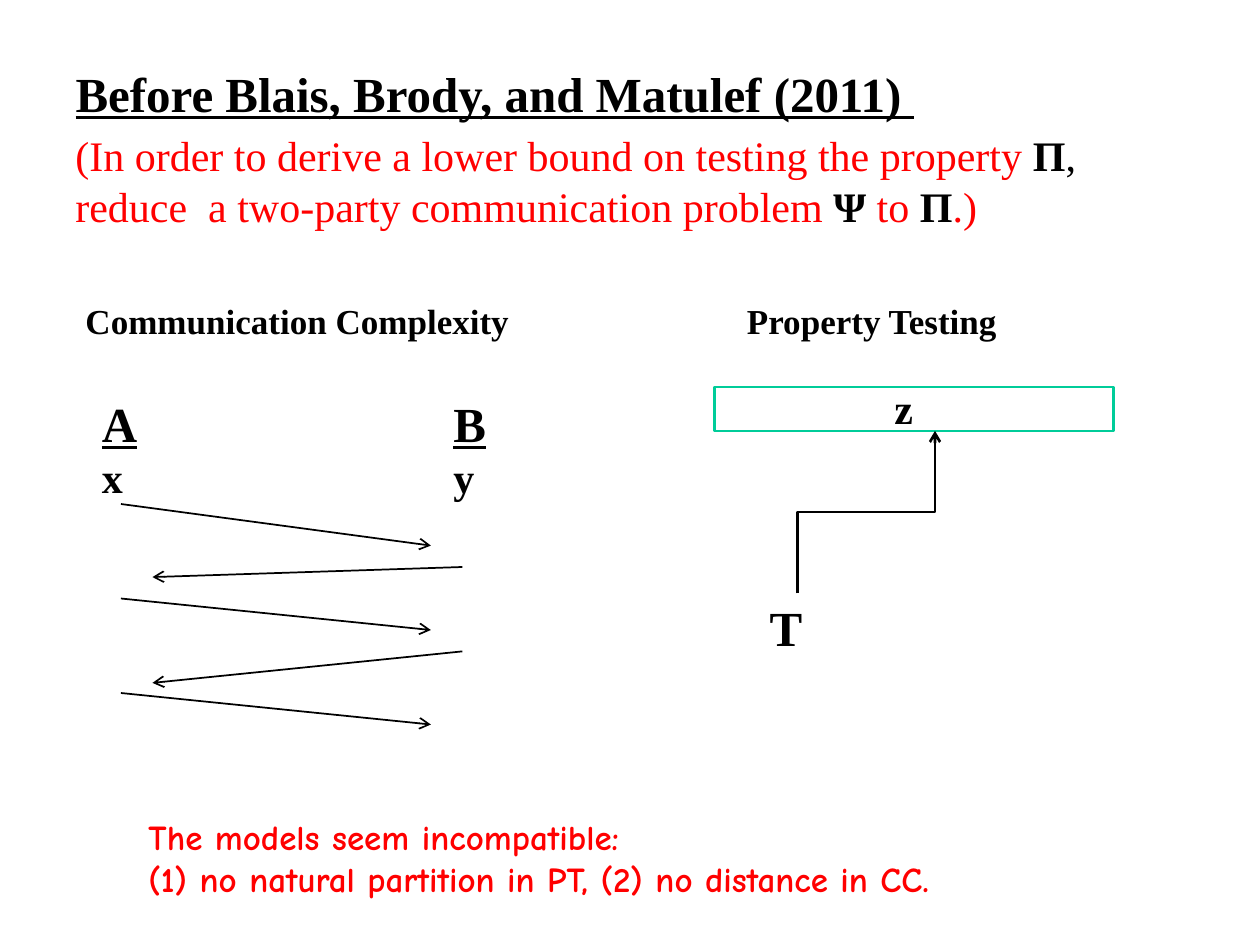
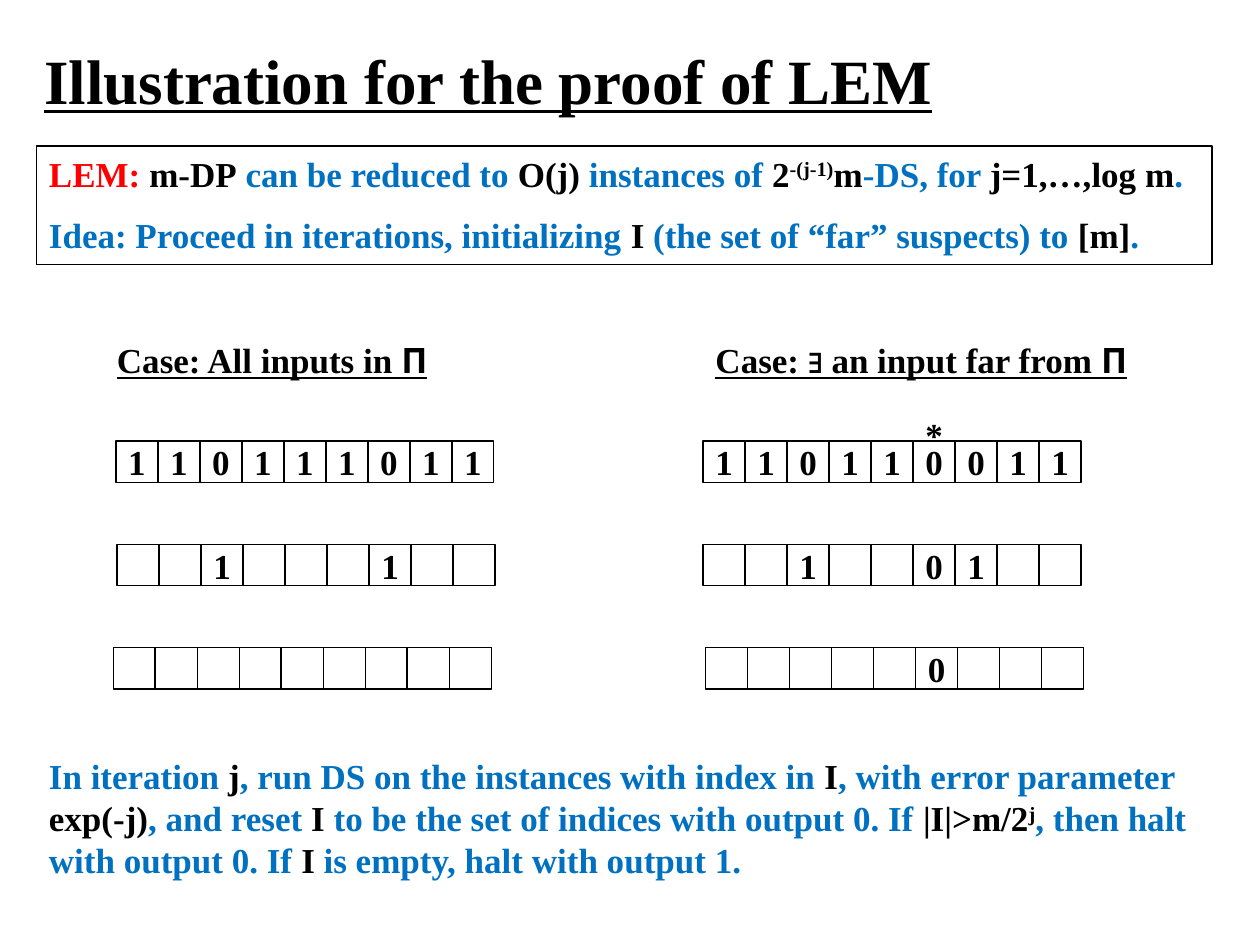
from lxml.etree import SubElement
from pptx import Presentation
from pptx.dml.color import RGBColor as Rgb
from pptx.enum.shapes import MSO_CONNECTOR as Link, MSO_SHAPE as Kind
from pptx.enum.text import MSO_ANCHOR as Anchor, MSO_AUTO_SIZE as Fit, PP_ALIGN as Align
from pptx.oxml.ns import qn
from pptx.util import Inches, Pt

HUES = {"ink": "000000", "red": "FF0000", "blue": "0070C0", "teal": "00CC99"}
SERIF, COMIC = "Times New Roman", "Comic Neue"
INK = {"hue": "ink"}
PLAIN = {"hue": "ink", "bold": False}
STRONG = {"hue": "ink", "bold": True}
POWER = {"hue": "ink", "raised": True}
SYMBOL = {"name": COMIC}
CELLS, CELL, TALL = 9, 1 / 3, 0.33


def style(font, hue=None, size=None, name=None, bold=None, under=None):
    """Set the given traits of a font."""
    if hue:
        font.color.rgb = Rgb.from_string(HUES[hue])
    if size:
        font.size = Pt(size)
    if name:
        font.name = name
    if bold is not None:
        font.bold = bold
    if under is not None:
        font.underline = under


def write(para, parts, hue="ink", size=20, name=SERIF, bold=True, under=False):
    """Fill a paragraph with strings and (string, traits) pairs."""
    style(para.font, hue, size, name, bold, under)
    for part in parts:
        words, traits = (part, {}) if isinstance(part, str) else part
        traits = dict(traits)
        raised = traits.pop("raised", False)
        for row, line in enumerate(words.split("\n")):
            if row:
                para.add_line_break()
            if line:
                run = para.add_run()
                run.text = line
                style(run.font, **traits)
                if raised:
                    run._r.get_or_add_rPr().set("baseline", "30000")


def label(slide, box, *parts, **traits):
    """Add a text box with one paragraph."""
    frame = slide.shapes.add_textbox(*map(Inches, box)).text_frame
    frame.word_wrap = True
    write(frame.paragraphs[0], parts, **traits)
    return frame


def head(slide, box, words, size):
    """Place and format the title."""
    title = slide.shapes.title
    title.left, title.top, title.width, title.height = map(Inches, box)
    frame = title.text_frame
    frame.auto_size = Fit.NONE
    frame.vertical_anchor = Anchor.TOP
    frame.margin_top = Inches(0.08)
    para = frame.paragraphs[0]
    para.alignment = Align.LEFT
    write(para, [words], size=size, under=True)


def frame_box(slide, box, hue="ink", width=0.75):
    """Add an unfilled outlined rectangle."""
    shape = slide.shapes.add_shape(Kind.RECTANGLE, *map(Inches, box))
    shape.shadow.inherit = False
    shape.fill.background()
    shape.line.color.rgb = Rgb.from_string(HUES[hue])
    shape.line.width = Pt(width)
    return shape


def link(slide, start, end, width=1, arrow=False, kind=Link.STRAIGHT):
    """Add a black line, with an arrowhead at its end if asked."""
    line = slide.shapes.add_connector(kind, *map(Inches, (*start, *end)))
    line.line.color.rgb = Rgb.from_string(HUES["ink"])
    line.line.width = Pt(width)
    if arrow:
        SubElement(line.line._get_or_add_ln(), qn("a:tailEnd"), type="arrow")
    SubElement(line._element.spPr, qn("a:effectLst"))
    return line


def elbow(slide, start, end):
    """Add an arrow that goes up, right and up again."""
    mid = [(a + b) / 2 for a, b in zip(start, end)]
    wide, high = (start[1] - end[1]) / 2, (end[0] - start[0]) / 2
    line = link(slide, (mid[0] + wide, mid[1] + high),
                (mid[0] - wide, mid[1] - high), 1.5, True, Link.ELBOW)
    line._element.spPr.find(qn("a:xfrm")).set("rot", "5400000")


def talk(slide, left, top):
    """Draw the two parties and the messages between them."""
    label(slide, (left, top, 3.58, 0.44), "Communication Complexity")
    for x, party, input in ((0.13, "A", "x"), (2.92, "B", "y")):
        label(slide, (left + x, top + 0.74, 0.5, 0.98),
              (party + "\n", {"size": 28, "under": True}), input, size=24)
    for y, drop in ((1.67, 0.33), (2.42, 0.25), (3.17, 0.25)):
        link(slide, (left + 0.38, top + y), (left + 2.84, top + y + drop), arrow=True)
    for y, drop in ((2.17, 0.08), (2.84, 0.25)):
        link(slide, (left + 3.09, top + y), (left + 0.63, top + y + drop), arrow=True)


def test(slide, left, top):
    """Draw the tester that queries its input."""
    label(slide, (left + 0.16, top, 2.33, 0.44), "Property Testing")
    frame_box(slide, (left, top + 0.74, 3.17, 0.35), "teal", 1.5)
    label(slide, (left + 0.34, top + 2.36, 0.5, 0.57), "T", size=28)
    label(slide, (left + 1.33, top + 0.66, 0.36, 0.5), "z", size=24)
    elbow(slide, (left + 0.66, top + 2.38), (left + 1.75, top + 1.09))


def digit(slide, left, top, mark):
    """Centre one mark over a cell."""
    frame = label(slide, (left, top, CELL, 0.44), mark)
    frame.margin_left = frame.margin_right = 0
    frame.paragraphs[0].alignment = Align.CENTER


def strip(slide, left, top, marks):
    """Draw a row of cells, where a dot stands for an empty one."""
    frame_box(slide, (left, top, CELLS * CELL, TALL))
    for col in range(1, CELLS):
        x = left + col * CELL
        link(slide, (x, top), (x, top + TALL))
    for col, mark in enumerate(marks):
        if mark != ".":
            digit(slide, left + col * CELL, top - 0.05, mark)


def case(slide, left, top, width, words, rows):
    """Draw a case heading above its rows of cells."""
    label(slide, (left, top, width, 0.44), words, ("Π", SYMBOL), under=True)
    for step, (shift, marks) in enumerate(rows):
        strip(slide, left + shift, top + 0.86 + step * 0.82, marks)


def lemma(slide, box):
    """Add the framed lemma and its idea."""
    frame = frame_box(slide, box).text_frame
    frame.word_wrap = True
    frame.vertical_anchor = Anchor.TOP
    first, second = frame.paragraphs[0], frame.add_paragraph()
    second.space_before = Pt(11)
    first.alignment = second.alignment = Align.LEFT
    write(first, [("LEM: ", {"hue": "red"}), ("m-DP", INK), " can be reduced to ",
                  ("O(j)", INK), " instances of ", ("2", INK), ("-(j-1)", POWER),
                  ("m", INK), "-DS, for ", ("j=1,…,log m", INK), "."], "blue")
    write(second, ["Idea: Proceed in iterations, initializing ", ("I", INK),
                   " (the set of “far” suspects) to ", ("[m]", INK), "."], "blue")


def models(slide):
    """Build the slide that compares the two models."""
    head(slide, (0.5, 0.42, 8.68, 0.56), "Before Blais, Brody, and Matulef (2011) ", 28)
    label(slide, (0.5, 0.98, 8.68, 0.94),
          "(In order to derive a lower bound on testing the property ", ("Π", STRONG),
          (", \n", PLAIN), "reduce  a two-party communication problem ",
          ("Ψ ", STRONG), "to ", ("Π", STRONG), ".)", hue="red", size=24, bold=False)
    talk(slide, 0.58, 2.33)
    test(slide, 5.67, 2.33)
    label(slide, (1.08, 6.42, 7.42, 0.77), "The models seem incompatible: \n"
          "(1) no natural partition in PT, (2) no distance in CC.", hue="red", name=COMIC)


def proof(slide):
    """Build the slide that illustrates the proof."""
    head(slide, (0.25, 0.25, 7.88, 0.67), "Illustration for the proof of LEM", 36)
    lemma(slide, (0.29, 1.16, 9.33, 0.94))
    case(slide, 0.83, 2.64, 2.67, "Case: All inputs in ",
         ((0.09, "110111011"), (0.1, "..1...1.."), (0.07, ".........")))
    case(slide, 5.58, 2.64, 3.58, "Case: ∃ an input far from ",
         ((0, "110110011"), (0, "..1..01.."), (0.02, ".....0...")))
    digit(slide, 5.58 + 5 * CELL, 3.23, "*")
    label(slide, (0.29, 5.94, 9.33, 1.11), "In iteration ", ("j", INK),
          ", run DS on the instances with index in ", ("I", INK),
          ", with error parameter ", ("exp(-j)", INK), ", and reset ", ("I", INK),
          " to be the set of indices with output 0. If ", ("|I|>m/2", INK),
          ("j", POWER), ", then halt with output 0. If ", ("I", INK),
          " is empty, halt with output 1.", hue="blue")


def main():
    """Build and save both slides."""
    deck = Presentation()
    deck.slide_width, deck.slide_height = Inches(10), Inches(7.5)
    for build in (models, proof):
        build(deck.slides.add_slide(deck.slide_layouts[5]))
    deck.save("out.pptx")


if __name__ == "__main__":
    main()
